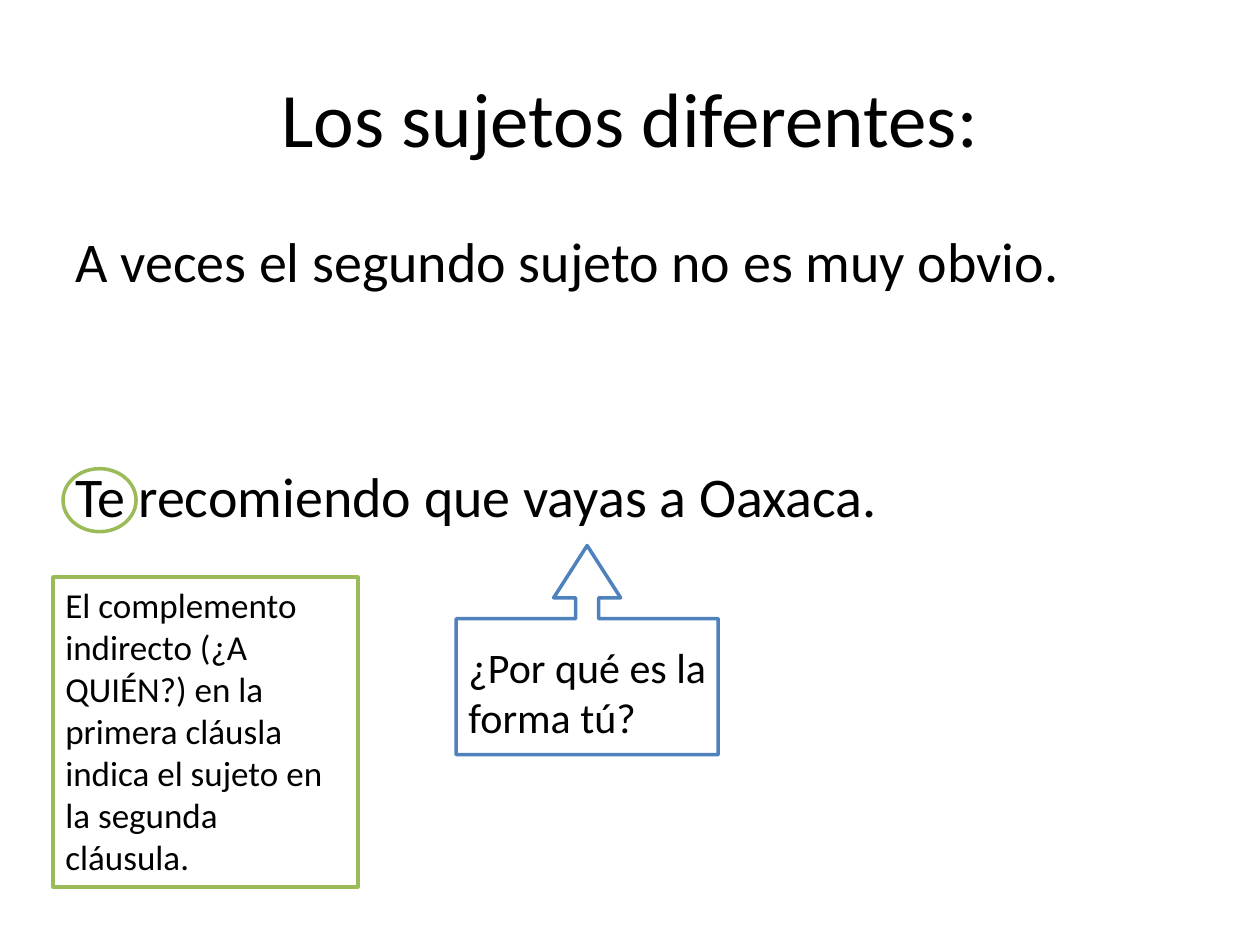
"""Build a Spanish grammar slide about different subjects."""
from pptx import Presentation
from pptx.dml.color import RGBColor
from pptx.enum.shapes import MSO_SHAPE
from pptx.enum.text import MSO_ANCHOR, PP_ALIGN
from pptx.util import Inches, Pt

OVAL, RECT, CALL = MSO_SHAPE.OVAL, MSO_SHAPE.RECTANGLE, MSO_SHAPE.UP_ARROW_CALLOUT
TOP, MID = MSO_ANCHOR.TOP, MSO_ANCHOR.MIDDLE
LEFT, MIDDLE = PP_ALIGN.LEFT, PP_ALIGN.CENTER
THEME = {
    "font": "Calibri",
    "ink": RGBColor(0, 0, 0),
    "paper": RGBColor(255, 255, 255),
    "green": RGBColor(0x9B, 0xBB, 0x59),
    "blue": RGBColor(0x4F, 0x81, 0xBD),
    "title": Pt(44),
    "body": Pt(32),
    "ask": Pt(24),
    "note": Pt(20),
    "line": Pt(2),
    "gap": Pt(95.8),
}


def write(shape, lines, size, align=LEFT, anchor=TOP):
    frame = shape.text_frame
    frame.word_wrap = True
    frame.vertical_anchor = anchor
    frame.text = "\n".join(lines)
    look = {"name": THEME["font"], "size": THEME[size]}
    for i, para in enumerate(frame.paragraphs):
        para.alignment = align
        para.space_before = THEME["gap"] if i else Pt(0)
        font = para.runs[0].font
        for key, value in look.items():
            setattr(font, key, value)
        font.color.rgb = THEME["ink"]


def outline(kind, box, color):
    shape = slide.shapes.add_shape(kind, *map(Inches, box))
    shape.shadow.inherit = False
    shape.fill.solid()
    shape.fill.fore_color.rgb = THEME["paper"]
    shape.line.color.rgb = THEME[color]
    shape.line.width = THEME["line"]
    return shape


deck = Presentation()
deck.slide_width, deck.slide_height = Inches(10), Inches(7.5)
slide = deck.slides.add_slide(deck.slide_layouts[6])

outline(OVAL, (0.5, 3.72, 0.58, 0.5), "green")

title = slide.shapes.add_textbox(*map(Inches, (0.5, 0.3, 9, 1.25)))
write(title, ["Los sujetos diferentes:"], "title", MIDDLE, MID)

body = slide.shapes.add_textbox(*map(Inches, (0.5, 1.75, 9, 4.95)))
write(body, ["A veces el segundo sujeto no es muy obvio.",
             "Te recomiendo que vayas a Oaxaca."], "body")

arrow = outline(CALL, (3.62, 4.33, 2.08, 1.66), "blue")
for i, value in enumerate((0.11, 0.16, 0.25, 0.65)):
    arrow.adjustments[i] = value

ask = slide.shapes.add_textbox(*map(Inches, (3.62, 5.04, 2.5, 0.91)))
write(ask, ["¿Por qué es la forma tú?"], "ask")

note = outline(RECT, (0.42, 4.58, 2.42, 2.46), "green")
write(note, ["El complemento indirecto (¿A QUIÉN?) en la primera cláusla "
             "indica el sujeto en la segunda cláusula."], "note")

deck.save("out.pptx")
